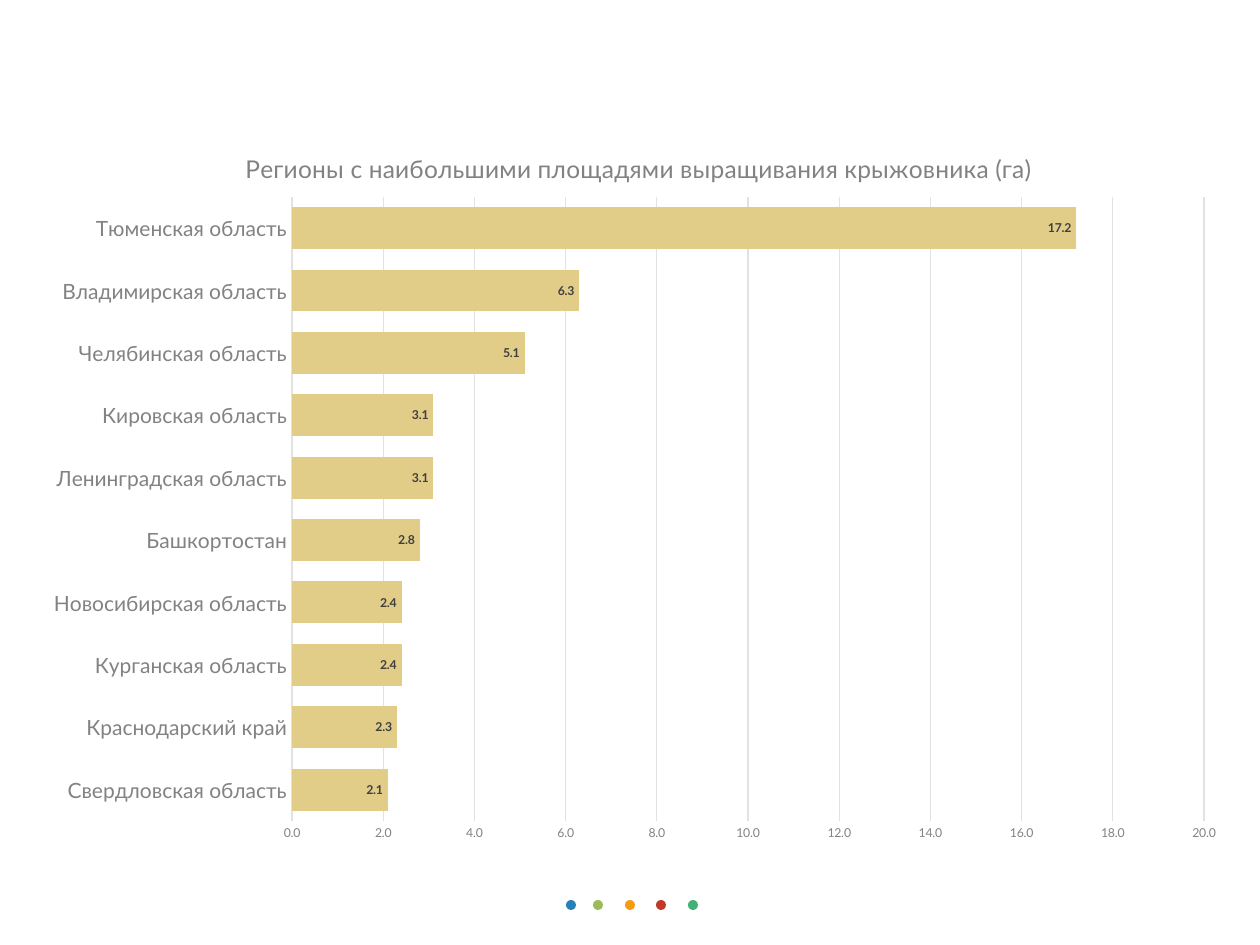
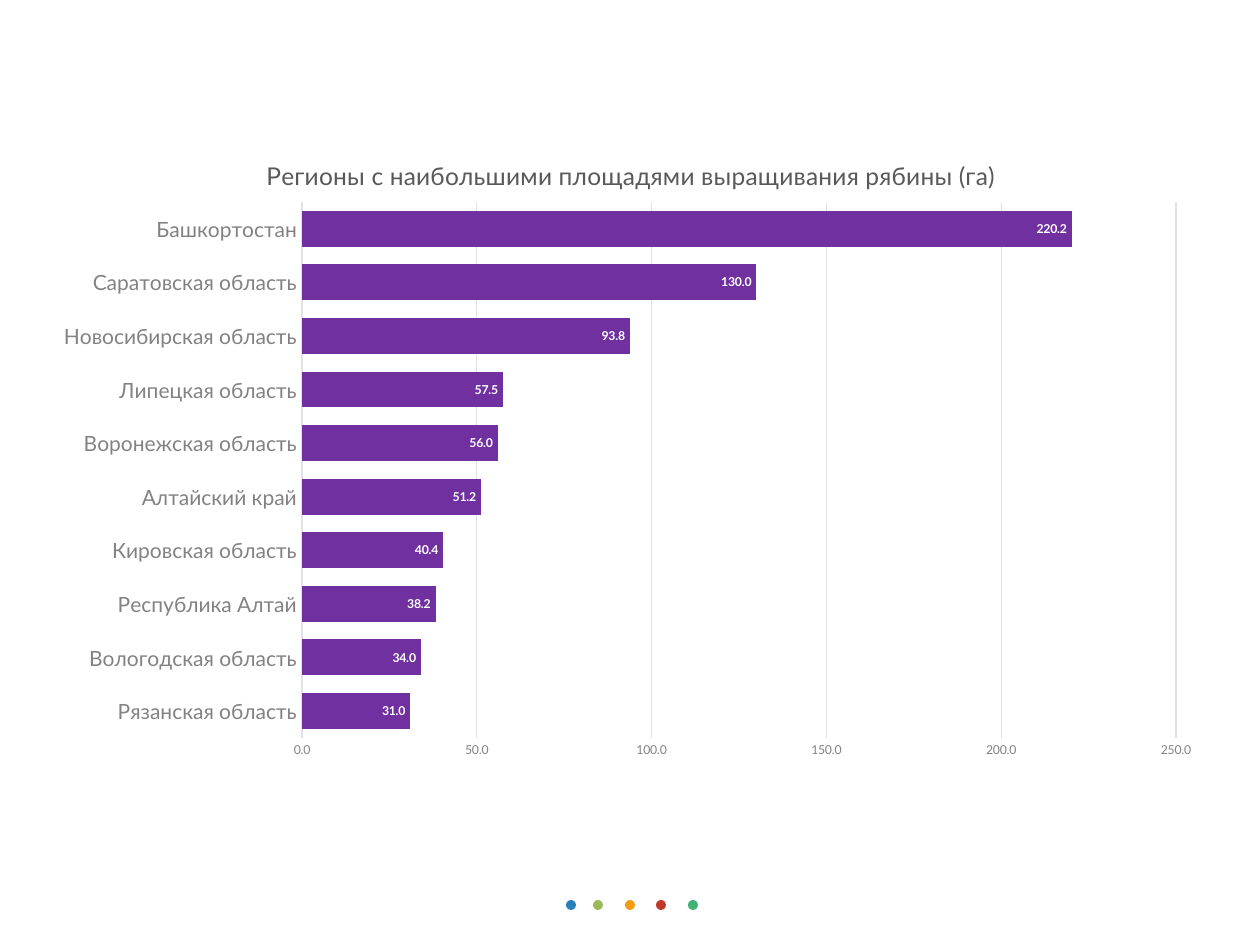
from lxml import etree
from pptx import Presentation
from pptx import util as u
from pptx.chart.data import CategoryChartData
from pptx.dml.color import RGBColor
from pptx.enum import chart as ch, shapes
from pptx.oxml.ns import qn

FONT = "Lato"
COLORS = {
    "text": "3F3F3F", "axis": "828282", "grid": "E2E2E2", "heading": "595959",
    "gold": "E2CD88", "purple": "7030A0", "white": "FFFFFF",
}
DOTS = [(566, "2980B9"), (593, "9BBB59"), (625, "F39C12"),
        (656, "C0392B"), (688, "41B176")]
DOT_TOP, DOT_SIZE = 900, 10

# Boxes are left, top, width, height in px on the slide; rows run bottom to top.
CHARTS = [
    dict(title="Регионы с наибольшими площадями выращивания крыжовника (га)",
         title_color="axis", title_at=(241, 146), bar="gold", label="text",
         box=(30, 116, 1211, 740), plot=(292, 197, 912, 624), top=20, step=2,
         rows=[("Свердловская область", 2.1), ("Краснодарский край", 2.3),
               ("Курганская область", 2.4), ("Новосибирская область", 2.4),
               ("Башкортостан", 2.8), ("Ленинградская область", 3.1),
               ("Кировская область", 3.1), ("Челябинская область", 5.1),
               ("Владимирская область", 6.3), ("Тюменская область", 17.2)]),
    dict(title="Регионы с наибольшими площадями выращивания рябины (га)",
         title_color="heading", title_at=(262, 153), bar="purple", label="white",
         box=(40, 125, 1174, 645), plot=(302, 202, 874, 536), top=250, step=50,
         rows=[("Рязанская область", 31), ("Вологодская область", 34),
               ("Республика Алтай", 38.2), ("Кировская область", 40.4),
               ("Алтайский край", 51.2), ("Воронежская область", 56),
               ("Липецкая область", 57.5), ("Новосибирская область", 93.8),
               ("Саратовская область", 130), ("Башкортостан", 220.2)]),
]

PX = 914400 / 126


def style(font, size, color, bold=False):
    font.name, font.size, font.bold = FONT, u.Pt(size), bold
    font.color.rgb = RGBColor.from_string(COLORS[color])


def place(el, index, box, area):
    """Give a chart part a fixed layout: area is in slide px, box is the chart's."""
    for old in el.findall(qn("c:layout")):
        el.remove(old)
    layout = etree.Element(qn("c:layout"))
    manual = etree.SubElement(layout, qn("c:manualLayout"))
    if len(area) == 4:
        etree.SubElement(manual, qn("c:layoutTarget")).set("val", "inner")
    for mode in ("xMode", "yMode"):
        etree.SubElement(manual, qn("c:" + mode)).set("val", "edge")
    x, y, w, h = box
    shares = [(area[0] - x) / w, (area[1] - y) / h]
    if len(area) == 4:
        shares += [area[2] / w, area[3] / h]
    for name, share in zip("xywh", shares):
        etree.SubElement(manual, qn("c:" + name)).set("val", f"{share:.4f}")
    el.insert(index, layout)


prs = Presentation()
prs.slide_width, prs.slide_height = int(1260 * PX), int(945 * PX)

for spec in CHARTS:
    s = prs.slides.add_slide(prs.slide_layouts[6])

    dots = s.shapes.add_group_shape()
    for left, color in DOTS:
        sp = dots.shapes.add_shape(
            shapes.MSO_SHAPE.OVAL,
            *(int(n * PX) for n in (left, DOT_TOP, DOT_SIZE, DOT_SIZE)))
        sp.shadow.inherit = False
        sp.fill.solid()
        sp.fill.fore_color.rgb = RGBColor.from_string(color)
        sp.line.fill.background()

    data = CategoryChartData(number_format="0.0")
    data.categories = [region for region, _ in spec["rows"]]
    data.add_series("Series 1", [area for _, area in spec["rows"]])
    chart = s.shapes.add_chart(ch.XL_CHART_TYPE.BAR_CLUSTERED,
                               *(int(n * PX) for n in spec["box"]), data).chart
    style(chart.font, 10, "text")
    chart.has_legend = False

    title = chart.chart_title
    title.text_frame.text = spec["title"]
    style(title.text_frame.paragraphs[0].runs[0].font, 14, spec["title_color"])
    title.include_in_layout = False
    place(title._element, 1, spec["box"], spec["title_at"])
    place(chart._chartSpace.chart.plotArea, 0, spec["box"], spec["plot"])

    regions, scale = chart.category_axis, chart.value_axis
    for axis, size in ((regions, 12), (scale, 7)):
        axis.major_tick_mark = axis.minor_tick_mark = ch.XL_TICK_MARK.NONE
        style(axis.tick_labels.font, size, "axis")
    scale.minimum_scale, scale.maximum_scale = 0, spec["top"]
    scale.major_unit = spec["step"]
    scale.tick_labels.number_format = "0.0"
    scale.tick_labels.number_format_is_linked = False
    scale.format.line.fill.background()
    regions.has_major_gridlines = False
    scale.has_major_gridlines = True
    for line, width in ((regions.format.line, 1),
                        (scale.major_gridlines.format.line, 0.75)):
        line.color.rgb = RGBColor.from_string(COLORS["grid"])
        line.width = u.Pt(width)

    plot = chart.plots[0]
    plot.gap_width, plot.overlap = 49, -10
    plot.vary_by_categories = False
    bars = plot.series[0]
    bars.invert_if_negative = False
    bars.format.fill.solid()
    bars.format.fill.fore_color.rgb = RGBColor.from_string(COLORS[spec["bar"]])

    plot.has_data_labels = True
    labels = plot.data_labels
    labels.show_value = True
    labels.position = ch.XL_LABEL_POSITION.INSIDE_END
    labels.number_format = "0.0"
    labels.number_format_is_linked = False
    style(labels.font, 7, spec["label"], bold=True)

prs.save("out.pptx")
